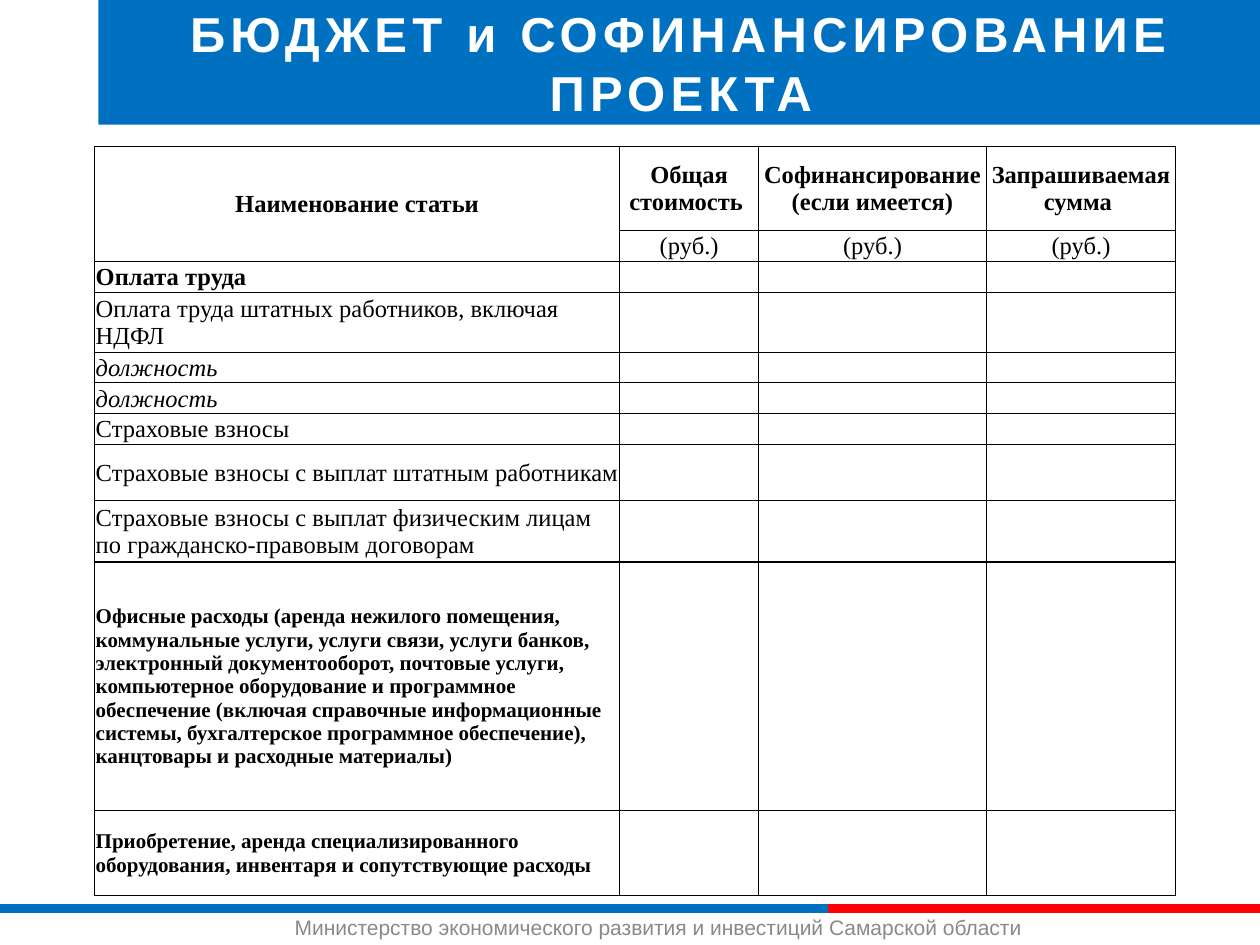
import pptx
import pptx.util
import pptx.dml.color
import pptx.enum.shapes
import pptx.enum.text
import lxml.etree

Inches, Pt = pptx.util.Inches, pptx.util.Pt
Align, Anchor = pptx.enum.text.PP_ALIGN, pptx.enum.text.MSO_ANCHOR
COLORS = {"blue": "0070C1", "red": "FF0000", "white": "FFFFFF",
          "black": "000000", "grey": "898989"}
WIDTH, HEIGHT = 10, 7.5
COLUMNS = [4.17, 1.1, 1.81, 1.5]
TABLE_LEFT = 0.75


def style(para, font_name, size, color, bold=False, italic=False):
    for span in para.runs:
        span.font.name, span.font.size = font_name, Pt(size)
        span.font.bold, span.font.italic = bold, italic
        span.font.color.rgb = pptx.dml.color.RGBColor.from_string(COLORS[color])


def add_budget_table(top, size, rows):
    """Each row is (height, look, texts); look holds b, i and c for bold, italic, centred."""
    frame = slide.shapes.add_table(
        len(rows), len(COLUMNS), Inches(TABLE_LEFT), Inches(top),
        Inches(sum(COLUMNS)), Inches(sum(row[0] for row in rows)))
    table = frame.table
    table.first_row = table.horz_banding = False
    for column, width in zip(table.columns, COLUMNS):
        column.width = Inches(width)
    for row, (height, look, texts) in zip(table.rows, rows):
        row.height = Inches(height)
        texts = texts + [""] * (len(COLUMNS) - len(texts))
        for cell, text in zip(row.cells, texts):
            cell.fill.background()
            cell.vertical_anchor = Anchor.MIDDLE
            cell.margin_left = cell.margin_right = cell.margin_top = Inches(0.01)
            cell.margin_bottom = 0
            para = cell.text_frame.paragraphs[0]
            para.text = text
            para.alignment = Align.CENTER if "c" in look else Align.LEFT
            style(para, "Times New Roman", size, "black", "b" in look, "i" in look)
            if not text:  # keeps empty cells from stretching the row
                end = lxml.etree.SubElement(para._p, pptx.oxml.ns.qn("a:endParaRPr"))
                end.set("sz", "1200")
            properties = cell._tc.get_or_add_tcPr()
            for place, side in enumerate(("lnL", "lnR", "lnT", "lnB")):
                properties.insert(place, pptx.oxml.parse_xml(
                    f'<a:{side} {pptx.oxml.ns.nsdecls("a")} w="{Pt(0.5)}"><a:solidFill>'
                    f'<a:srgbClr val="{COLORS["black"]}"/></a:solidFill></a:{side}>'))
    return table


deck = pptx.Presentation()
deck.slide_width, deck.slide_height = Inches(WIDTH), Inches(HEIGHT)
slide = deck.slides.add_slide(deck.slide_layouts[5])

# Footer: two-colour rule and the ministry's name
rule_y, rule_split = 7.21, 6.57
for start, end, color in ((0, rule_split, "blue"), (rule_split, WIDTH, "red")):
    rule = slide.shapes.add_connector(
        pptx.enum.shapes.MSO_CONNECTOR.STRAIGHT,
        Inches(start), Inches(rule_y), Inches(end), Inches(rule_y))
    rule.line.color.rgb = pptx.dml.color.RGBColor.from_string(COLORS[color])
    rule.line.width = Pt(5)
    lxml.etree.SubElement(rule._element.spPr, pptx.oxml.ns.qn("a:effectLst"))

footer = slide.shapes.add_textbox(Inches(2.24), Inches(rule_y), Inches(6.54), Inches(0.3))
footer.text_frame.word_wrap = True
footer.text_frame.text = "Министерство экономического развития и инвестиций Самарской области"
style(footer.text_frame.paragraphs[0], "Arial", 12, "grey")

# Title band
title = slide.shapes.title
title.left, title.top = Inches(0.78), 0
title.width, title.height = Inches(9.25), Inches(0.99)
title.fill.solid()
title.fill.fore_color.rgb = pptx.dml.color.RGBColor.from_string(COLORS["blue"])
title.text_frame.text = "БЮДЖЕТ и СОФИНАНСИРОВАНИЕ ПРОЕКТА"
title.text_frame.word_wrap = True
title.text_frame.auto_size = pptx.enum.text.MSO_AUTO_SIZE.NONE
title.text_frame.vertical_anchor = Anchor.MIDDLE
heading = title.text_frame.paragraphs[0]
heading.alignment = Align.CENTER
style(heading, "Arial", 28, "white", bold=True)
heading.runs[0].font._element.set("spc", "300")

# Budget tables
line, double = 0.23, 0.45
staff_table = add_budget_table(1.16, 14, [
    (0.67, "bc", ["Наименование статьи", "Общая стоимость ",
                  "Софинансирование (если имеется)", "Запрашиваемая сумма "]),
    (line, "c", [""] + ["(руб.)"] * 3),
    (line, "b", ["Оплата труда"]),
    (double, "", ["Оплата труда штатных работников, включая НДФЛ"]),
    (line, "i", ["должность"]),
    (line, "i", ["должность"]),
    (line, "", ["Страховые взносы"]),
    (double, "", ["Страховые взносы с выплат штатным работникам"]),
    (double, "", ["Страховые взносы с выплат физическим лицам "
                  "по гражданско-правовым договорам"]),
])
staff_table.cell(0, 0).merge(staff_table.cell(1, 0))

add_budget_table(4.46, 12, [
    (1.97, "b", ["Офисные расходы (аренда нежилого помещения, коммунальные услуги, "
                 "услуги связи, услуги банков, электронный документооборот, почтовые "
                 "услуги, компьютерное оборудование и программное обеспечение (включая "
                 "справочные информационные системы, бухгалтерское программное "
                 "обеспечение), канцтовары и расходные материалы)"]),
    (0.68, "b", ["Приобретение, аренда специализированного оборудования, инвентаря "
                 "и сопутствующие расходы"]),
])

deck.save("out.pptx")
